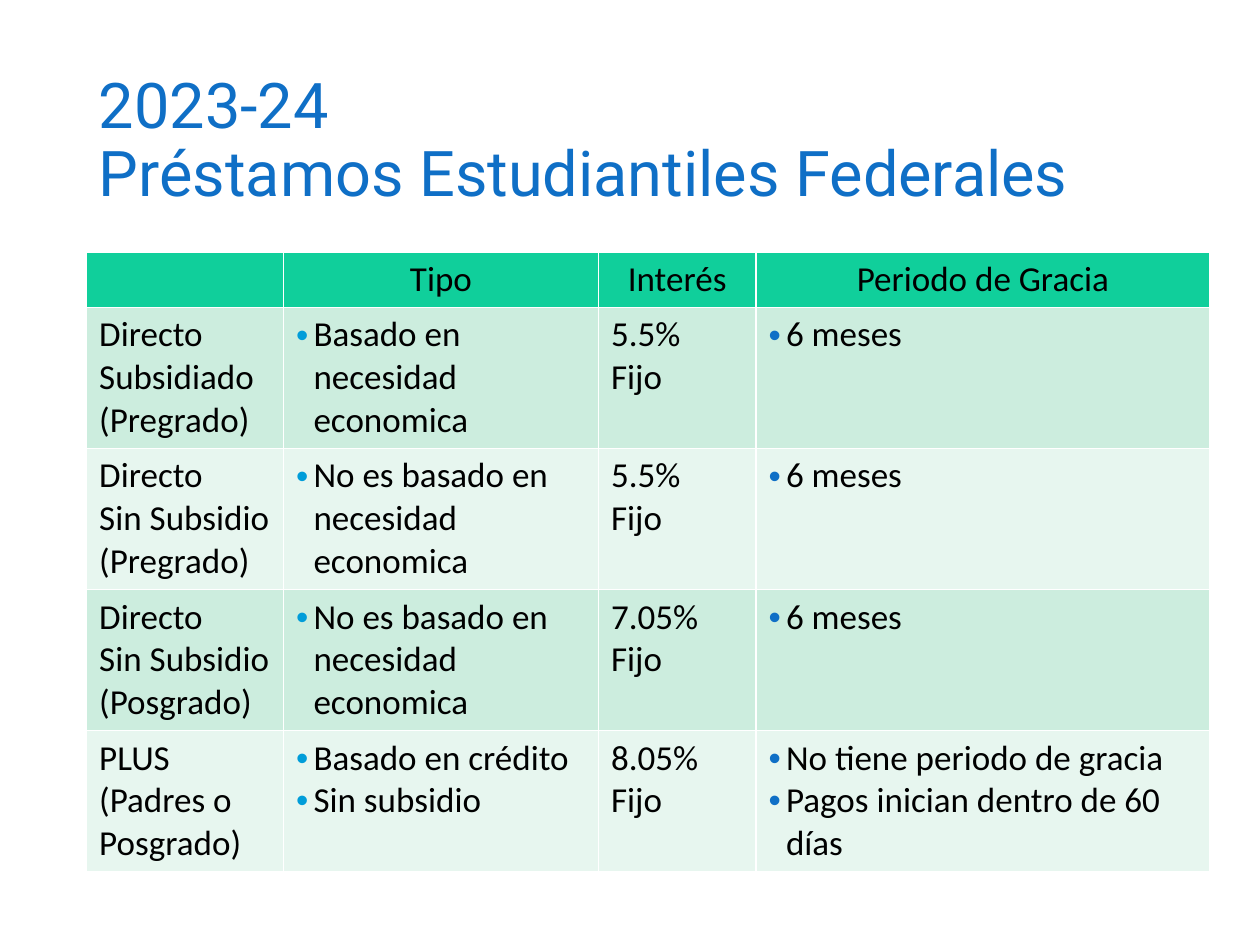
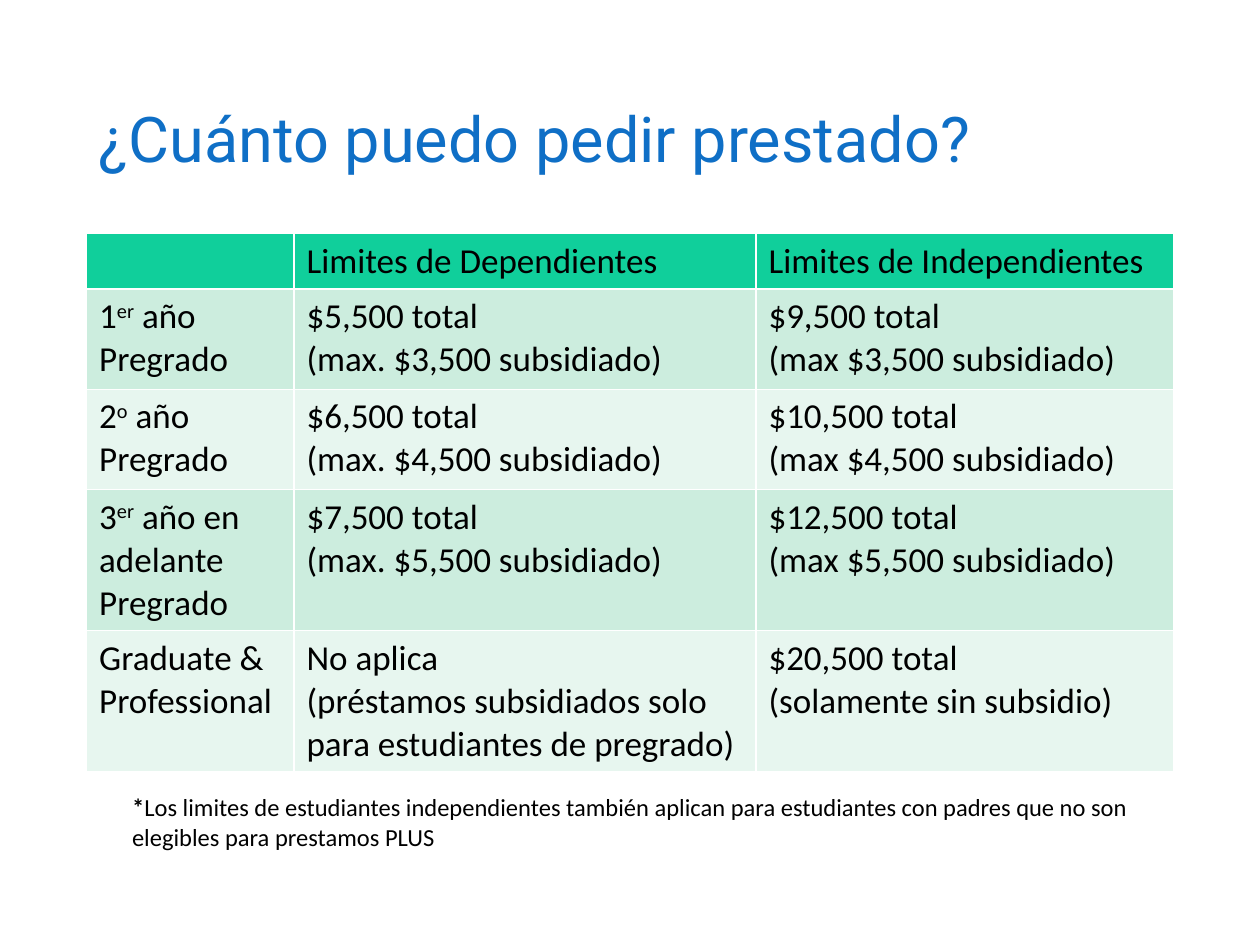
from lxml import etree
from pptx import Presentation
from pptx.dml.color import RGBColor
from pptx.enum import text
from pptx.oxml import ns
from pptx.util import Pt

TITLE_BLUE = RGBColor(0x0F, 0x6F, 0xC6)
BULLET_CYAN = RGBColor(0x00, 0x9D, 0xD9)
HEADER_GREEN = RGBColor(0x10, 0xCF, 0x9B)
BAND_DARK = RGBColor(0xCC, 0xED, 0xDE)
BAND_LIGHT = RGBColor(0xE7, 0xF6, 0xEF)
BLACK = RGBColor(0, 0, 0)
WHITE = RGBColor(0xFF, 0xFF, 0xFF)
LEFT = Pt(49.5)
HEADER_ROW, TWO_LINES, THREE_LINES = 31.6, 57.4, 80.6


def add_solid(parent, tag, color):
    """Append a colour-holding element (such as a:buClr) to parent."""
    holder = etree.SubElement(parent, ns.qn(tag))
    etree.SubElement(holder, ns.qn("a:srgbClr"), val=str(color))


def write_paragraph(paragraph, content, size, bullet=None):
    """Write content; \\v breaks the line and ^...^ encloses a superscript."""
    if bullet:
        properties = paragraph._p.get_or_add_pPr()
        properties.set("marL", str(Pt(10)))
        properties.set("indent", str(-Pt(10)))
        add_solid(properties, "a:buClr", bullet)
        etree.SubElement(properties, ns.qn("a:buFont"), typeface="Arial")
        etree.SubElement(properties, ns.qn("a:buChar"), char="•")
    paragraph.font.size = Pt(size)
    paragraph.font.name = "Calibri"
    paragraph.font.color.rgb = BLACK
    for line_number, line in enumerate(content.split("\v")):
        if line_number:
            paragraph.add_line_break()
        for part_number, part in enumerate(line.split("^")):
            run = paragraph.add_run()
            run.text = part
            if part_number % 2:
                run.font._element.set("baseline", "30000")


loans = [
    ["", "Tipo", "Interés", "Periodo de Gracia"],
    ["Directo\vSubsidiado\v(Pregrado)", "Basado en necesidad economica",
     "5.5%\vFijo", "6 meses"],
    ["Directo\vSin Subsidio\v(Pregrado)", "No es basado en necesidad economica",
     "5.5%\vFijo", "6 meses"],
    ["Directo\vSin Subsidio\v(Posgrado)", "No es basado en necesidad economica",
     "7.05%\vFijo", "6 meses"],
    ["PLUS\n(Padres o Posgrado)", "Basado en crédito\nSin subsidio",
     "8.05%\vFijo", "No tiene periodo de gracia\nPagos inician dentro de 60 días"],
]
limits = [
    ["", "Limites de Dependientes", "Limites de Independientes"],
    ["1^er^ año\vPregrado", "$5,500 total\v(max. $3,500 subsidiado)",
     "$9,500 total\v(max $3,500 subsidiado)"],
    ["2^o^ año\vPregrado", "$6,500 total\v(max. $4,500 subsidiado)",
     "$10,500 total\v(max $4,500 subsidiado)"],
    ["3^er^ año en adelante\vPregrado", "$7,500 total\v(max. $5,500 subsidiado)",
     "$12,500 total\v(max $5,500 subsidiado)"],
    ["Graduate & Professional",
     "No aplica\v(préstamos subsidiados solo para estudiantes de pregrado)",
     "$20,500 total\v(solamente sin subsidio)"],
]
# title, table top, column widths, row heights, header alignment, bullet columns, cells
pages = [
    ("2023-24\vPréstamos Estudiantiles Federales", 144, [112.5, 180, 90, 259.5],
     [HEADER_ROW] + [THREE_LINES] * 4, text.PP_ALIGN.CENTER,
     {1: BULLET_CYAN, 3: TITLE_BLUE}, loans),
    ("¿Cuánto puedo pedir prestado?", 133.5, [118.5, 264, 238.5],
     [HEADER_ROW] + [TWO_LINES] * 2 + [THREE_LINES] * 2, text.PP_ALIGN.LEFT,
     {}, limits),
]

deck = Presentation()
deck.slide_width, deck.slide_height = Pt(720), Pt(540)

for title, top, widths, heights, header_align, bullets, rows in pages:
    slide = deck.slides.add_slide(deck.slide_layouts[6])
    heading = slide.shapes.add_textbox(LEFT, Pt(28.75), Pt(621), Pt(104.4)).text_frame
    heading.word_wrap = True
    heading.vertical_anchor = text.MSO_ANCHOR.MIDDLE
    heading_line = heading.paragraphs[0]
    heading_line.text = title
    heading_line.line_spacing = 0.9
    heading_line.font.size = Pt(36)
    heading_line.font.name = "Roboto"
    heading_line.font.color.rgb = TITLE_BLUE

    table = slide.shapes.add_table(len(rows), len(widths), LEFT, Pt(top),
                                   Pt(sum(widths)), Pt(sum(heights))).table
    table.first_row = table.horz_banding = False
    for column, width in zip(table.columns, widths):
        column.width = Pt(width)
    for row, height in zip(table.rows, heights):
        row.height = Pt(height)

    for r, row in enumerate(rows):
        for c, content in enumerate(row):
            cell = table.cell(r, c)
            cell_properties = cell._tc.get_or_add_tcPr()
            for side in "LRTB":
                border = etree.SubElement(cell_properties, ns.qn(f"a:ln{side}"),
                                          w=str(Pt(1)))
                add_solid(border, "a:solidFill", WHITE)
            cell.fill.solid()
            cell.fill.fore_color.rgb = (
                HEADER_GREEN if r == 0 else BAND_DARK if r % 2 else BAND_LIGHT)
            for i, line in enumerate(content.split("\n")):
                frame = cell.text_frame
                paragraph = frame.add_paragraph() if i else frame.paragraphs[0]
                write_paragraph(paragraph, line, 20, bullets.get(c) if r else None)
                if r == 0:
                    paragraph.alignment = header_align

footnote = slide.shapes.add_textbox(Pt(68.4), Pt(449.3), Pt(621), Pt(41)).text_frame
footnote.word_wrap = True
note = footnote.paragraphs[0]
write_paragraph(note, "*", 14)
note.runs[0].font.bold = True
note.add_run().text = (
    "Los limites de estudiantes independientes también aplican para estudiantes "
    "con padres que no son elegibles para prestamos PLUS")

deck.save("out.pptx")
